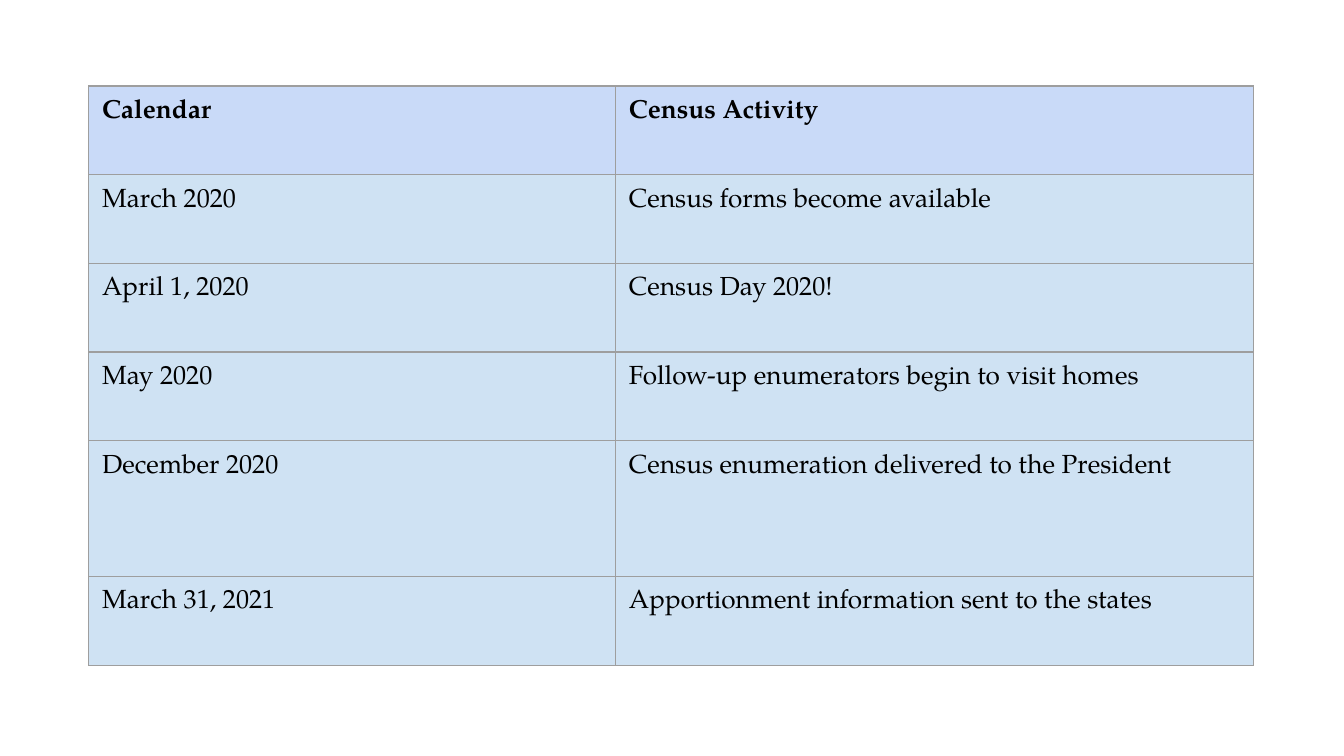
from dataclasses import dataclass

from lxml import etree
from pptx import Presentation
from pptx import util as u
from pptx.dml.color import RGBColor
from pptx.enum import text
from pptx.oxml import ns
from pptx.slide import Slide
from pptx.table import _Cell


@dataclass(frozen=True)
class Theme:
    font: str = "TeX Gyre Pagella"
    size: u.Pt = u.Pt(14)
    ink: str = "000000"
    header_fill: str = "C9DAF8"
    body_fill: str = "CFE2F3"
    border: str = "9E9E9E"
    border_width: u.Pt = u.Pt(0.75)
    cell_margin: u.Inches = u.Inches(0.1)


@dataclass(frozen=True)
class CalendarRow:
    date: str
    activity: str
    height: float = 0.66
    is_header: bool = False


THEME = Theme()
SLIDE_WIDTH = u.Inches(10)
SLIDE_HEIGHT = SLIDE_WIDTH * 9 // 16
COLUMN_WIDTHS = (3.92, 4.75)
ROWS = (
    CalendarRow("Calendar", "Census Activity", is_header=True),
    CalendarRow("March 2020", "Census forms become available"),
    CalendarRow("April 1, 2020", "Census Day 2020!"),
    CalendarRow("May 2020", "Follow-up enumerators begin to visit homes"),
    CalendarRow("December 2020", "Census enumeration delivered to the President", height=1.01),
    CalendarRow("March 31, 2021", "Apportionment information sent to the states"),
)


def add_borders(cell: _Cell) -> None:
    """Line all four sides; call before filling, as the schema puts lines first."""
    properties = cell._tc.get_or_add_tcPr()
    for side in ("a:lnL", "a:lnR", "a:lnT", "a:lnB"):
        line = etree.SubElement(properties, ns.qn(side), w=str(int(THEME.border_width)))
        fill = etree.SubElement(line, ns.qn("a:solidFill"))
        etree.SubElement(fill, ns.qn("a:srgbClr"), val=THEME.border)


def write_cell(cell: _Cell, wording: str, is_header: bool) -> None:
    add_borders(cell)
    cell.fill.solid()
    fill_color = THEME.header_fill if is_header else THEME.body_fill
    cell.fill.fore_color.rgb = RGBColor.from_string(fill_color)
    cell.margin_left = cell.margin_right = THEME.cell_margin
    cell.margin_top = cell.margin_bottom = THEME.cell_margin
    cell.vertical_anchor = text.MSO_ANCHOR.TOP

    run = cell.text_frame.paragraphs[0].add_run()
    run.text = wording
    run.font.name = THEME.font
    run.font.size = THEME.size
    run.font.bold = is_header
    run.font.color.rgb = RGBColor.from_string(THEME.ink)


def add_calendar(slide: Slide, left: float, top: float) -> None:
    width = sum(COLUMN_WIDTHS)
    height = sum(row.height for row in ROWS)
    table = slide.shapes.add_table(
        len(ROWS), len(COLUMN_WIDTHS),
        u.Inches(left), u.Inches(top), u.Inches(width), u.Inches(height),
    ).table
    table.horz_banding = False
    for column, column_width in zip(table.columns, COLUMN_WIDTHS):
        column.width = u.Inches(column_width)
    for index, row in enumerate(ROWS):
        table.rows[index].height = u.Inches(row.height)
        for column_index, wording in enumerate((row.date, row.activity)):
            write_cell(table.cell(index, column_index), wording, row.is_header)


def main() -> None:
    presentation = Presentation()
    presentation.slide_width = SLIDE_WIDTH
    presentation.slide_height = SLIDE_HEIGHT
    blank_layout = presentation.slide_layouts.get_by_name("Blank")
    slide = presentation.slides.add_slide(blank_layout)
    add_calendar(slide, left=0.66, top=0.64)
    presentation.save("out.pptx")


if __name__ == "__main__":
    main()
